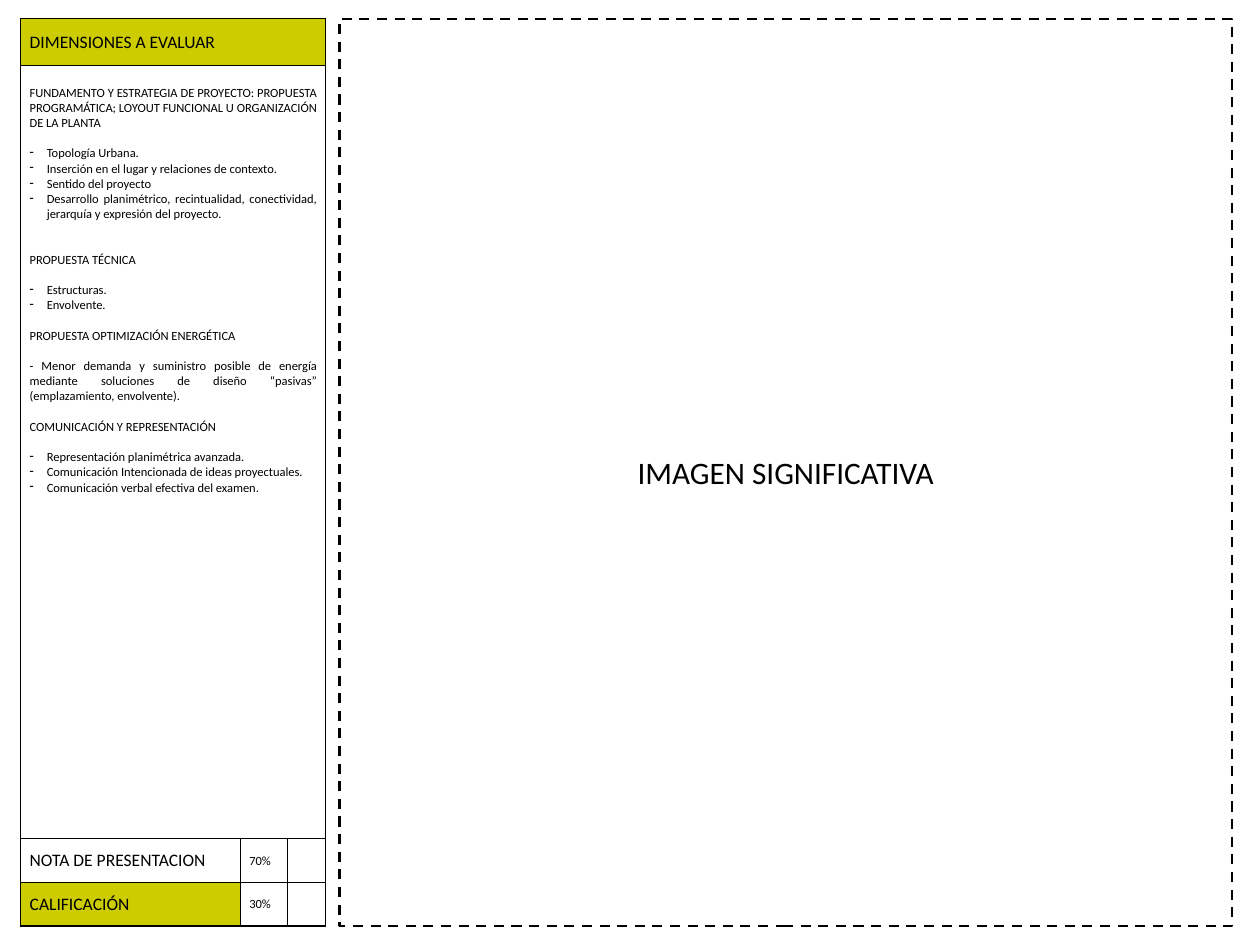
from lxml.etree import SubElement
from pptx import Presentation
from pptx.dml.color import RGBColor
from pptx.enum.dml import MSO_LINE
from pptx.enum.text import MSO_ANCHOR, MSO_AUTO_SIZE, PP_ALIGN
from pptx.oxml.ns import qn
from pptx.util import Inches, Pt

HUES = {"ink": "000000", "lime": "CCCC00", "paper": "FFFFFF"}
FONT = "Calibri"
WIDE, HIGH = 14, 10.5
COLS, ROWS = 1400, 1050
LINE = 12.2
PARTS = [
    (0, "FUNDAMENTO Y ESTRATEGIA DE PROYECTO: PROPUESTA PROGRAMÁTICA; "
        "LOYOUT FUNCIONAL U ORGANIZACIÓN DE LA PLANTA", True,
     ["Topología Urbana.",
      "Inserción en el lugar y relaciones de contexto.",
      "Sentido del proyecto",
      "Desarrollo planimétrico, recintualidad, conectividad, "
      "jerarquía y expresión del proyecto."]),
    (2, "PROPUESTA TÉCNICA", True, ["Estructuras.", "Envolvente."]),
    (1, "PROPUESTA OPTIMIZACIÓN ENERGÉTICA", False,
     ["- Menor demanda y suministro posible de energía mediante soluciones "
      "de diseño “pasivas” (emplazamiento, envolvente)."]),
    (1, "COMUNICACIÓN Y REPRESENTACIÓN", True,
     ["Representación planimétrica avanzada.",
      "Comunicación Intencionada de ideas proyectuales.",
      "Comunicación verbal efectiva del examen."]),
]
GRADES = [("NOTA DE PRESENTACION", "70%", "paper"),
          ("CALIFICACIÓN", "30%", "lime")]


def across(cols):
    """Turn grid columns into a length."""
    return Inches(WIDE * cols / COLS)


def down(rows):
    """Turn grid rows into a length."""
    return Inches(HIGH * rows / ROWS)


def tint(name):
    """Look up a colour."""
    return RGBColor.from_string(HUES[name])


def style(para, text, size, align=PP_ALIGN.JUSTIFY):
    """Write and format one paragraph."""
    para.text = text
    para.alignment = align
    para.font.size = Pt(size)
    para.font.name = FONT
    para.font.bold = False
    para.font.color.rgb = tint("ink")


def dash(para):
    """Give a paragraph a hanging dash bullet."""
    props = para._p.get_or_add_pPr()
    hang = Inches(0.19)
    props.set("marL", str(hang))
    props.set("indent", str(-hang))
    SubElement(props, qn("a:buChar"), char="-")


def frame(cell, hue):
    """Border and fill one cell."""
    props = cell._tc.get_or_add_tcPr()
    for side in "LRTB":
        line = SubElement(props, qn(f"a:ln{side}"), w=str(Pt(1)))
        fill = SubElement(line, qn("a:solidFill"))
        SubElement(fill, qn("a:srgbClr"), val=HUES["ink"])
    cell.fill.solid()
    cell.fill.fore_color.rgb = tint(hue)


def label(cell, text, size):
    """Write one line at the middle of a cell."""
    cell.vertical_anchor = MSO_ANCHOR.MIDDLE
    style(cell.text_frame.paragraphs[0], text, size)


def topics(cell):
    """List the headings and their points in a cell."""
    cell.margin_top = Inches(0.05) + Pt(LINE)
    body = cell.text_frame
    para = body.paragraphs[0]
    for gap, head, listed, points in PARTS:
        if gap:
            para = body.add_paragraph()
        style(para, head, 10)
        para.space_before = Pt(gap * LINE)
        para.space_after = Pt(LINE)
        for point in points:
            para = body.add_paragraph()
            if listed:
                dash(para)
            style(para, point, 10)


def rubric(slide, left, top, cols, rows):
    """Build the grading table in its box."""
    box = across(left), down(top), across(sum(cols)), down(sum(rows))
    table = slide.shapes.add_table(len(rows), len(cols), *box).table
    table.first_row = table.horz_banding = False
    for col, size in zip(table.columns, cols):
        col.width = across(size)
    for row, size in zip(table.rows, rows):
        row.height = down(size)
    hues = {(0, col): "lime" for col in range(len(cols))}
    for row, (name, share, hue) in enumerate(GRADES, 2):
        label(table.cell(row, 0), name, 14)
        label(table.cell(row, 1), share, 10)
        hues[row, 0] = hue
    for row in range(len(rows)):
        for col in range(len(cols)):
            frame(table.cell(row, col), hues.get((row, col), "paper"))
    for row in range(2):
        table.cell(row, 0).merge(table.cell(row, len(cols) - 1))
    label(table.cell(0, 0), "DIMENSIONES A EVALUAR", 14)
    topics(table.cell(1, 0))


def panel(slide, left, top, width, height):
    """Place the dashed image area in its box."""
    title = slide.shapes.title
    title.left, title.top = across(left), down(top)
    title.width, title.height = across(width), down(height)
    title.line.color.rgb = tint("ink")
    title.line.width = Pt(2)
    title.line.dash_style = MSO_LINE.DASH
    body = title.text_frame
    body.auto_size = MSO_AUTO_SIZE.NONE
    body.word_wrap = True
    body.vertical_anchor = MSO_ANCHOR.MIDDLE
    style(body.paragraphs[0], "IMAGEN SIGNIFICATIVA", 25, PP_ALIGN.CENTER)


def main():
    """Build and save the slide."""
    deck = Presentation()
    deck.slide_width, deck.slide_height = Inches(WIDE), Inches(HIGH)
    slide = deck.slides.add_slide(deck.slide_layouts[5])
    panel(slide, 377, 21, 992, 1008)
    rubric(slide, 23, 21, [244, 53, 42], [52, 859, 49, 48])
    deck.save("out.pptx")


if __name__ == "__main__":
    main()
